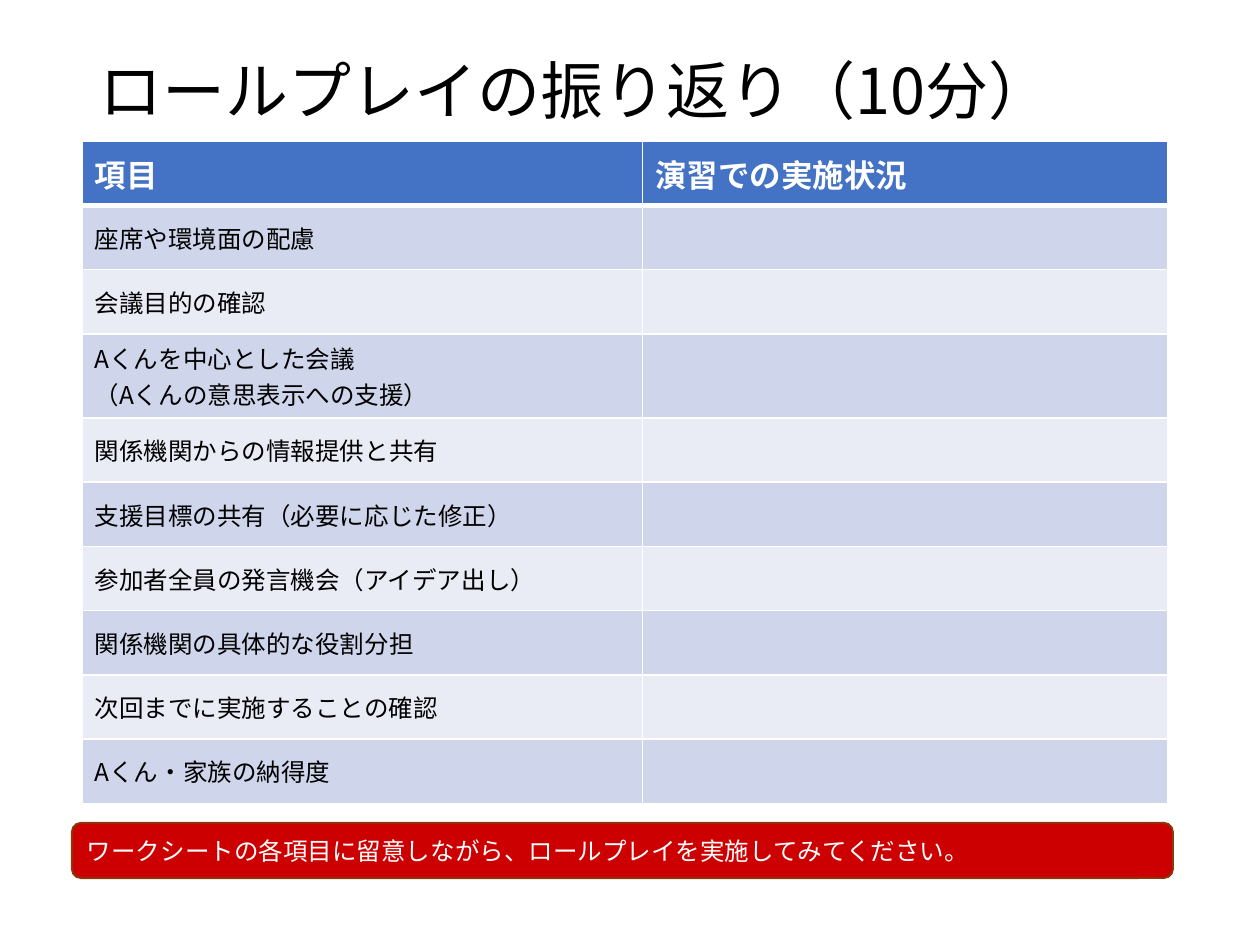
from lxml.etree import SubElement
from pptx import Presentation
from pptx.dml.color import RGBColor
from pptx.enum.shapes import MSO_SHAPE
from pptx.enum.text import MSO_ANCHOR, MSO_AUTO_SIZE, PP_ALIGN
from pptx.oxml.ns import qn
from pptx.util import Inches, Pt

WHITE = RGBColor(0xFF, 0xFF, 0xFF)
BLACK = RGBColor(0x00, 0x00, 0x00)
BLUE = RGBColor(0x44, 0x72, 0xC4)
BAND_DARK = RGBColor(0xCF, 0xD5, 0xEA)
BAND_LIGHT = RGBColor(0xE9, 0xEB, 0xF5)
RED = RGBColor(0xCC, 0x00, 0x00)
BROWN = RGBColor(0x84, 0x3C, 0x0B)
JAPANESE_FONT = "Noto Sans CJK JP"

HEADINGS = ["項目", "演習での実施状況"]
ITEMS = [
    ["座席や環境面の配慮"],
    ["会議目的の確認"],
    ["Aくんを中心とした会議", "（Aくんの意思表示への支援）"],
    ["関係機関からの情報提供と共有"],
    ["支援目標の共有（必要に応じた修正）"],
    ["参加者全員の発言機会（アイデア出し）"],
    ["関係機関の具体的な役割分担"],
    ["次回までに実施することの確認"],
    ["Aくん・家族の納得度"],
]
COLUMN_WIDTHS = [4.45, 4.17]
ROW_HEIGHT, TALL_ROW_HEIGHT = 0.51, 0.61


def write_lines(text_frame, lines, size, color, font_name=JAPANESE_FONT, bold=False):
    for index, line in enumerate(lines):
        paragraph = text_frame.paragraphs[0] if index == 0 else text_frame.add_paragraph()
        paragraph.alignment = PP_ALIGN.LEFT
        run = paragraph.add_run()
        run.text = line
        run.font.size = Pt(size)
        run.font.bold = bold
        run.font.color.rgb = color
        run.font.name = font_name
        SubElement(run.font._element, qn("a:ea"), typeface=JAPANESE_FONT)


def format_cell(cell, fill_color, bottom_width=1):
    cell.vertical_anchor = MSO_ANCHOR.MIDDLE
    properties = cell._tc.get_or_add_tcPr()
    for side, width in (("L", 1), ("R", 1), ("T", 1), ("B", bottom_width)):
        border = SubElement(properties, qn(f"a:ln{side}"), w=str(Pt(width)))
        border_fill = SubElement(border, qn("a:solidFill"))
        SubElement(border_fill, qn("a:srgbClr"), val=str(WHITE))
    cell.fill.solid()
    cell.fill.fore_color.rgb = fill_color


presentation = Presentation()
presentation.slide_width = Inches(10)
presentation.slide_height = Inches(7.5)
slide = presentation.slides.add_slide(presentation.slide_layouts[5])

# Title
title = slide.shapes.title
title.left, title.top = Inches(0.69), Inches(0.02)
title.width, title.height = Inches(8.62), Inches(1.45)
title.text_frame.auto_size = MSO_AUTO_SIZE.NONE
title.text_frame.vertical_anchor = MSO_ANCHOR.MIDDLE
write_lines(title.text_frame, ["ロールプレイの振り返り（10分）"], 36, BLACK)
title.text_frame.paragraphs[0].line_spacing = 0.9

# Review table: header row
row_heights = [ROW_HEIGHT] + [
    TALL_ROW_HEIGHT if len(lines) > 1 else ROW_HEIGHT for lines in ITEMS
]
table = slide.shapes.add_table(
    len(row_heights), len(COLUMN_WIDTHS), Inches(0.65), Inches(1.12),
    Inches(sum(COLUMN_WIDTHS)), Inches(sum(row_heights)),
).table
for column, width in zip(table.columns, COLUMN_WIDTHS):
    column.width = Inches(width)
for row, height in zip(table.rows, row_heights):
    row.height = Inches(height)
for cell, heading in zip(table.rows[0].cells, HEADINGS):
    format_cell(cell, BLUE, bottom_width=3)
    write_lines(cell.text_frame, [heading], 18, WHITE, "Calibri", bold=True)

# Review table: banded items, with the second column left open
for row_index, lines in enumerate(ITEMS, start=1):
    for cell in table.rows[row_index].cells:
        format_cell(cell, BAND_DARK if row_index % 2 else BAND_LIGHT,
                    bottom_width=1)
    write_lines(table.cell(row_index, 0).text_frame, lines, 14, BLACK)
for cell in table.rows[1].cells:
    cell._tc.tcPr.find(qn("a:lnT")).set("w", str(Pt(3)))

# Instruction bar
bar = slide.shapes.add_shape(
    MSO_SHAPE.ROUNDED_RECTANGLE, Inches(0.57), Inches(6.53), Inches(8.74), Inches(0.44)
)
bar.shadow.inherit = False
bar.fill.solid()
bar.fill.fore_color.rgb = RED
bar.line.color.rgb = BROWN
bar.line.width = Pt(1)
bar.text_frame.word_wrap = True
bar.text_frame.vertical_anchor = MSO_ANCHOR.MIDDLE
write_lines(
    bar.text_frame,
    ["ワークシートの各項目に留意しながら、ロールプレイを実施してみてください。"],
    14, WHITE,
)

presentation.save("out.pptx")
